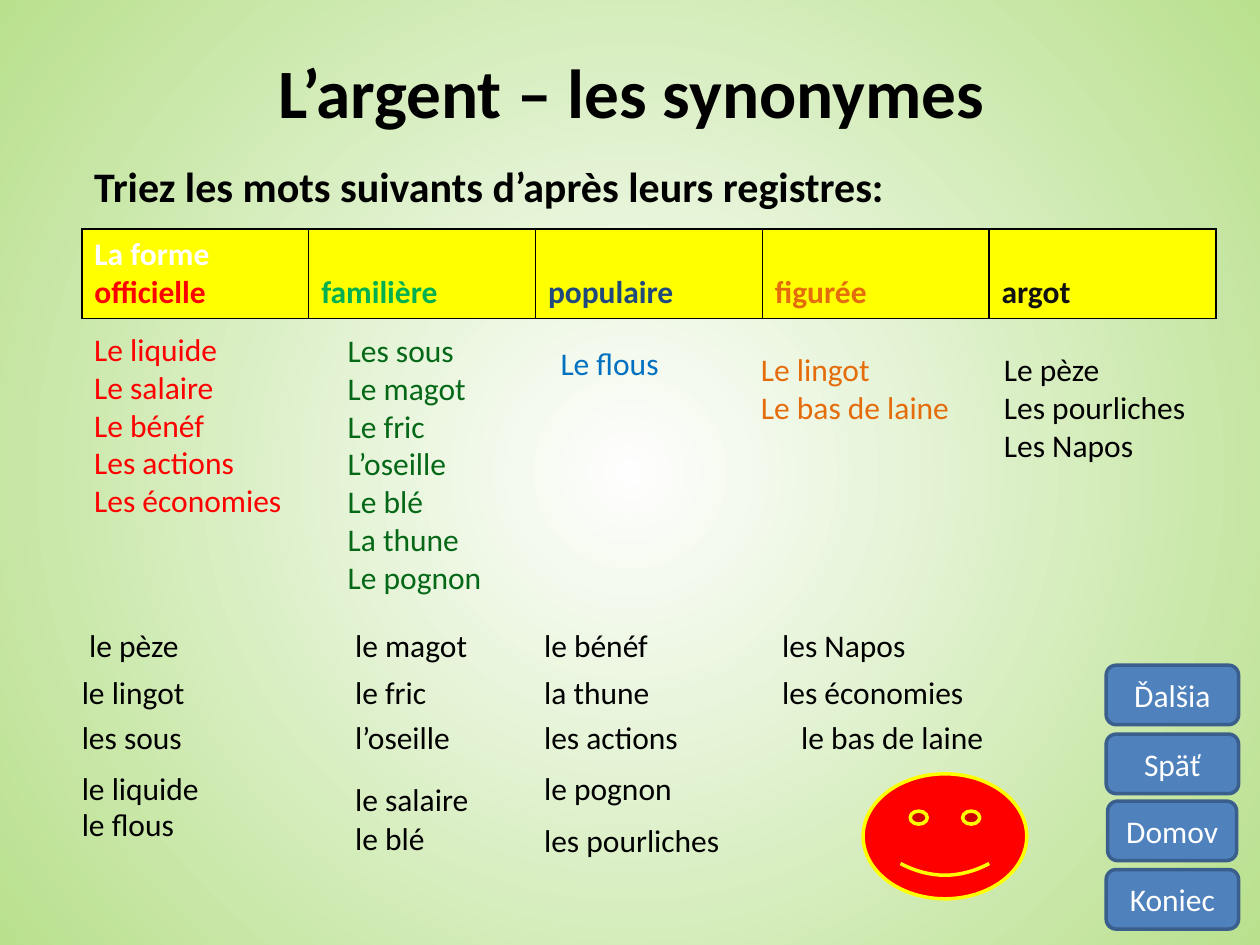
from lxml import etree
from pptx import Presentation
from pptx import util as u
from pptx.dml.color import RGBColor
from pptx.enum import shapes, text
from pptx.oxml.ns import qn

Cm = u.Cm
COL = {
    "black": "000000", "white": "FFFFFF", "red": "FF0000", "yellow": "FFFF00",
    "green": "00B050", "dark green": "046817", "navy": "1F497D", "blue": "0070C0",
    "orange": "E46C0A", "ink": "111111", "button": "4F81BD", "button edge": "3A5F8C",
    "centre": "FEFEFE", "edge": "B8E08D",
}


def style(p, color="black", size=18, bold=False):
    p.font.name, p.font.size, p.font.bold = "Calibri", u.Pt(size), bold
    p.font.color.rgb = RGBColor.from_string(COL[color])


def add_text(x, y, w, h, lines, color="black", size=18, bold=False, wrap=True):
    """Add a text box, one paragraph per line; lengths are in cm."""
    tf = s.shapes.add_textbox(Cm(x), Cm(y), Cm(w), Cm(h)).text_frame
    tf.word_wrap = wrap
    tf.text = "\n".join(lines)
    for p in tf.paragraphs:
        style(p, color, size, bold)
    return tf


prs = Presentation()
prs.slide_width, prs.slide_height = Cm(25.4), Cm(19.05)
s = prs.slides.add_slide(prs.slide_layouts[6])

# Background: radial gradient from the centre
fill = s.background.fill
fill.gradient()
for stop, name in zip(fill.gradient_stops, ("centre", "edge")):
    stop.color.rgb = RGBColor.from_string(COL[name])
grad = s._element.find(".//" + qn("a:gradFill"))
grad.remove(grad.find(qn("a:lin")))
radial = etree.SubElement(grad, qn("a:path"), path="circle")
etree.SubElement(radial, qn("a:fillToRect"), {side: "50000" for side in "ltrb"})

# Navigation buttons and smiley
rounded = shapes.MSO_SHAPE.ROUNDED_RECTANGLE
smiley = shapes.MSO_SHAPE.SMILEY_FACE
for kind, label, x, y, w, h, face, edge in (
    (rounded, "Ďalšia", 22.3, 13.41, 2.67, 1.2, "button", "button edge"),
    (rounded, "Späť", 22.3, 14.8, 2.67, 1.2, "button", "button edge"),
    (rounded, "Domov", 22.33, 16.15, 2.6, 1.2, "button", "button edge"),
    (rounded, "Koniec", 22.3, 17.53, 2.67, 1.2, "button", "button edge"),
    (smiley, "", 17.4, 15.6, 3.3, 2.52, "red", "yellow"),
):
    sp = s.shapes.add_shape(kind, Cm(x), Cm(y), Cm(w), Cm(h))
    sp.shadow.inherit = False
    sp.fill.solid()
    sp.fill.fore_color.rgb = RGBColor.from_string(COL[face])
    sp.line.color.rgb = RGBColor.from_string(COL[edge])
    sp.line.width = u.Pt(2)
    if label:
        tf = sp.text_frame
        tf.margin_left = tf.margin_right = 0
        tf.text = label
        tf.paragraphs[0].alignment = text.PP_ALIGN.CENTER
        style(tf.paragraphs[0], "white")

# Title and instruction
tf = add_text(1.3, 1, 22.86, 1.8, ["L’argent – les synonymes"], size=39.6, bold=True)
tf.margin_top = 0
tf.paragraphs[0].alignment = text.PP_ALIGN.CENTER
add_text(1.65, 3.12, 20.65, 1.27,
         ["Triez les mots suivants d’après leurs registres:"], size=24, bold=True)

# Register headings
headings = (
    [("La forme ", "white"), ("officielle", "red")],
    [("familière", "green")],
    [("populaire", "navy")],
    [("figurée", "orange")],
    [("argot", "ink")],
)
table = s.shapes.add_table(1, 5, Cm(1.65), Cm(4.62), Cm(22.86), Cm(1.8)).table
for cell, runs in zip(table.rows[0].cells, headings):
    tcPr = cell._tc.get_or_add_tcPr()
    for side in ("lnL", "lnR", "lnT", "lnB"):
        ln = etree.SubElement(tcPr, qn("a:" + side), w=str(u.Pt(1)))
        solid = etree.SubElement(ln, qn("a:solidFill"))
        etree.SubElement(solid, qn("a:srgbClr"), val=COL["black"])
    cell.fill.solid()
    cell.fill.fore_color.rgb = RGBColor.from_string(COL["yellow"])
    cell.vertical_anchor = text.MSO_ANCHOR.BOTTOM
    p = cell.text_frame.paragraphs[0]
    for words, color in runs:
        r = p.add_run()
        r.text = words
        style(r, color, bold=True)

# Sorted answers
for x, y, w, h, color, words in (
    (1.65, 6.53, 4.29, 4.88, "red",
     ["Le liquide", "Le salaire", "Le bénéf", "Les actions", "Les économies"]),
    (6.76, 6.55, 3.81, 5.64, "dark green",
     ["Les sous", "Le magot", "Le fric", "L’oseille", "Le blé", "La thune", "Le pognon"]),
    (11.05, 6.81, 3.99, 1.02, "blue", ["Le flous"]),
    (15.09, 6.93, 4.62, 1.8, "orange", ["Le lingot", "Le bas de laine"]),
    (19.99, 6.93, 4.37, 2.57, "black", ["Le pèze", "Les pourliches", "Les Napos"]),
):
    add_text(x, y, w, h, words, color)

# Words to sort: each column has its left edge, then word, top and width
row1, row2, row3 = 12.5, 13.44, 14.35
for left, words in (
    (1.4, [("le lingot", row2, 2.62), ("les sous", row3, 2.54),
           ("le liquide", 15.37, 2.9), ("le flous", 16.1, 2.39)]),
    (1.55, [("le pèze", row1, 2.34)]),
    (6.91, [("le magot", row1, 2.79), ("le fric", row2, 1.96), ("l’oseille", row3, 2.44),
            ("le salaire", 15.6, 2.82), ("le blé", 16.38, 1.93)]),
    (10.72, [("le bénéf", row1, 2.64), ("la thune", row2, 2.67), ("les actions", row3, 3.25),
             ("le pognon", 15.37, 3.12), ("les pourliches", 16.43, 4.8)]),
    (15.52, [("les Napos", row1, 3.02), ("les économies", row2, 4.22)]),
    (15.9, [("le bas de laine", row3, 4.24)]),
):
    for word, y, w in words:
        add_text(left, y, w, 1.02, [word], wrap=False)

prs.save("out.pptx")
